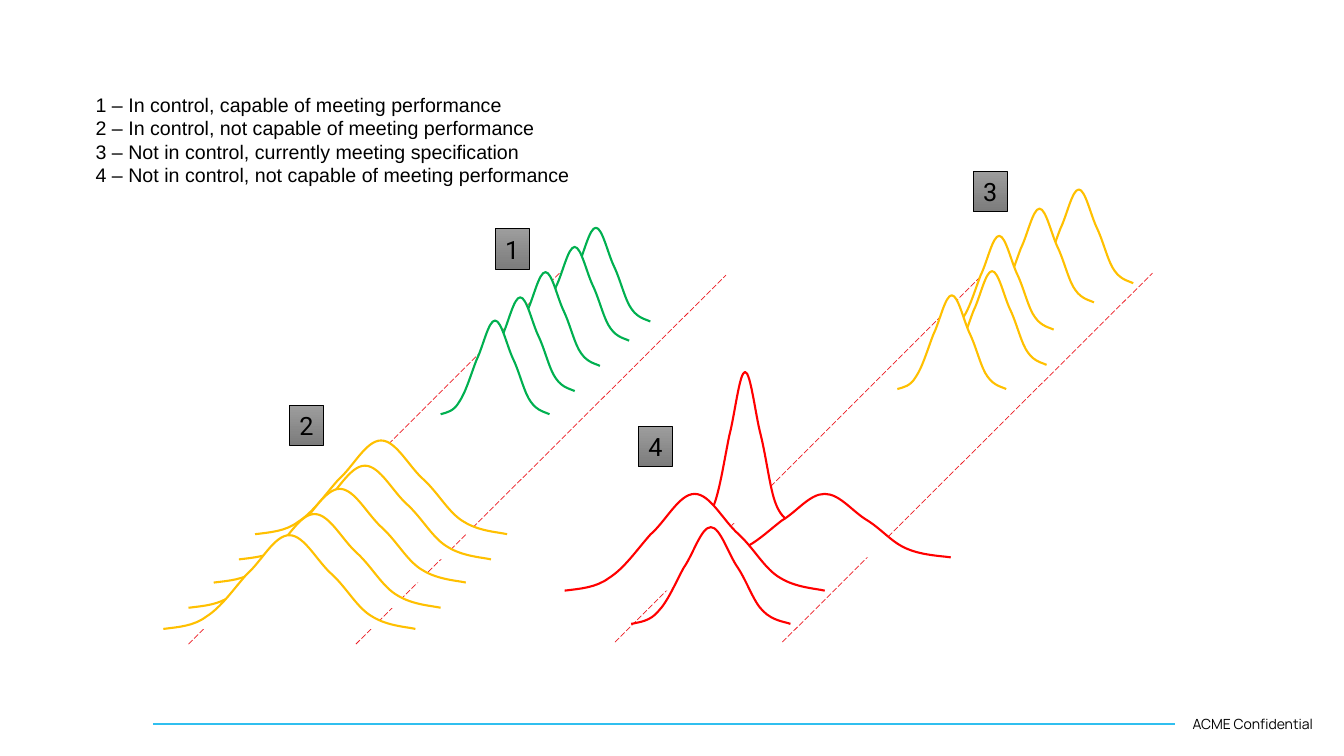
from lxml.etree import SubElement
from pptx import Presentation
from pptx.dml.color import RGBColor
from pptx.enum.dml import MSO_LINE
from pptx.enum.shapes import MSO_CONNECTOR, MSO_SHAPE
from pptx.enum.text import MSO_ANCHOR, PP_ALIGN
from pptx.oxml.ns import qn
from pptx.util import Pt

PX = 9144  # 100 px to the inch
BLACK, WHITE = "000000", "FFFFFF"
AMBER, GREEN, RED = "FFC000", "00B050", "FF0000"
LIMIT_RED, FOOTER_BLUE = "EC1C24", "30BFEF"

# Bell outline in a unit box: a start point, then three points per cubic curve
BELL = [
    (0, 1),
    (0.06, 0.98), (0.12, 0.97), (0.17, 0.87),
    (0.23, 0.77), (0.28, 0.57), (0.33, 0.42),
    (0.39, 0.28), (0.44, 0), (0.5, 0),
    (0.56, 0), (0.61, 0.28), (0.67, 0.42),
    (0.73, 0.57), (0.77, 0.78), (0.83, 0.87),
    (0.89, 0.97), (0.97, 0.98), (1, 1),
]

LEGEND = [
    "1 – In control, capable of meeting performance",
    "2 – In control, not capable of meeting performance",
    "3 – Not in control, currently meeting specification",
    "4 – Not in control, not capable of meeting performance",
]


def color(value):
    return RGBColor.from_string(value)


def px(*lengths):
    return [length * PX for length in lengths]


def add_run(paragraph, text, size, font):
    run = paragraph.add_run()
    run.text = text
    run.font.size = Pt(size)
    run.font.name = font
    run.font.color.rgb = color(BLACK)


def add_text(slide, box, lines, size, font):
    frame = slide.shapes.add_textbox(*px(*box)).text_frame
    frame.word_wrap = True
    for index, line in enumerate(lines):
        paragraph = frame.add_paragraph() if index else frame.paragraphs[0]
        add_run(paragraph, line, size, font)


def add_line(slide, ends, hue, width):
    rule = slide.shapes.add_connector(MSO_CONNECTOR.STRAIGHT, *px(*ends))
    rule.line.color.rgb = color(hue)
    rule.line.width = Pt(width)
    SubElement(rule._element.spPr, qn("a:effectLst"))
    return rule


def round_segments(freeform):
    """Turn every three straight segments into one cubic curve."""
    segments = list(freeform._element.iter(qn("a:lnTo")))
    outline = segments[0].getparent()
    for start in range(0, len(segments), 3):
        curve = SubElement(outline, qn("a:cubicBezTo"))
        for segment in segments[start:start + 3]:
            curve.append(segment[0])
            outline.remove(segment)


def add_bell(slide, box, hue):
    left, top, width, height = px(*box)
    points = [(left + x * width, top + y * height) for x, y in BELL]
    builder = slide.shapes.build_freeform(*points[0])
    builder.add_line_segments(points[1:], close=False)
    bell = builder.convert_to_shape()
    round_segments(bell)
    bell.shadow.inherit = False
    bell.fill.solid()
    bell.fill.fore_color.rgb = color(WHITE)
    bell.line.color.rgb = color(hue)
    bell.line.width = Pt(1.5)


def add_tag(slide, left, top, number):
    tag = slide.shapes.add_shape(MSO_SHAPE.RECTANGLE, *px(left, top, 34, 40))
    tag.shadow.inherit = False
    tag.fill.gradient()
    tag.fill.gradient_angle = 270
    for stop, hue in zip(tag.fill.gradient_stops, ("9D9D9D", "7C7C7C")):
        stop.color.rgb = color(hue)
    tag.line.color.rgb = color(BLACK)
    tag.line.width = Pt(0.5)
    frame = tag.text_frame
    frame.word_wrap = False
    frame.vertical_anchor = MSO_ANCHOR.MIDDLE
    frame.paragraphs[0].alignment = PP_ALIGN.CENTER
    add_run(frame.paragraphs[0], number, 18, "Roboto")


def process_panel(slide, left, top, bells, tags):
    # Specification limits
    for x1, y1, x2, y2 in ((0, 383, 383, 0), (166, 383, 533, 17)):
        limit = add_line(slide, (left + x1, top + y1, left + x2, top + y2),
                         LIMIT_RED, 0.5)
        limit.line.dash_style = MSO_LINE.LONG_DASH
    # Distributions, from back to front
    for x, y, width, height, hue in bells:
        add_bell(slide, (left + x, top + y, width, height), hue)
    # Numbered tags
    for x, y, number in tags:
        add_tag(slide, left + x, top + y, number)


def footer(slide, left, top):
    add_line(slide, (left, top, left + 1013, top), FOOTER_BLUE, 1.5)
    add_text(slide, (left + 1021, top - 13, 148, 27),
             ["ACME Confidential"], 10, "Manrope")


def main():
    presentation = Presentation()
    presentation.slide_width, presentation.slide_height = px(1333, 750)
    slide = presentation.slides.add_slide(presentation.slide_layouts[6])

    footer(slide, 152, 718)

    # In control: processes 1 and 2
    incapable = [(66, 181), (50, 206), (25, 229), (0, 254), (-25, 275)]
    capable = [(350, -30), (329, -11), (300, 14), (275, 39), (250, 62)]
    process_panel(
        slide, 187, 256,
        [(x, y, 250, 93, AMBER) for x, y in incapable]
        + [(x, y, 108, 93, GREEN) for x, y in capable],
        [(304, -29, "1"), (100, 146, "2")])

    # Not in control: processes 3 and 4
    erratic = [(83, 115, 92, 150), (83, 236, 250, 63),
               (-50, 236, 258, 96), (16, 269, 158, 96)]
    drifting = [(406, -66), (367, -47), (327, -20), (320, 15), (280, 39)]
    process_panel(
        slide, 610, 254,
        [(*box, RED) for box in erratic]
        + [(x, y, 108, 93, AMBER) for x, y in drifting],
        [(355, -84, "3"), (23, 169, "4")])

    add_text(slide, (85, 87, 635, 104), LEGEND, 14, "Arial")
    presentation.save("out.pptx")


if __name__ == "__main__":
    main()
